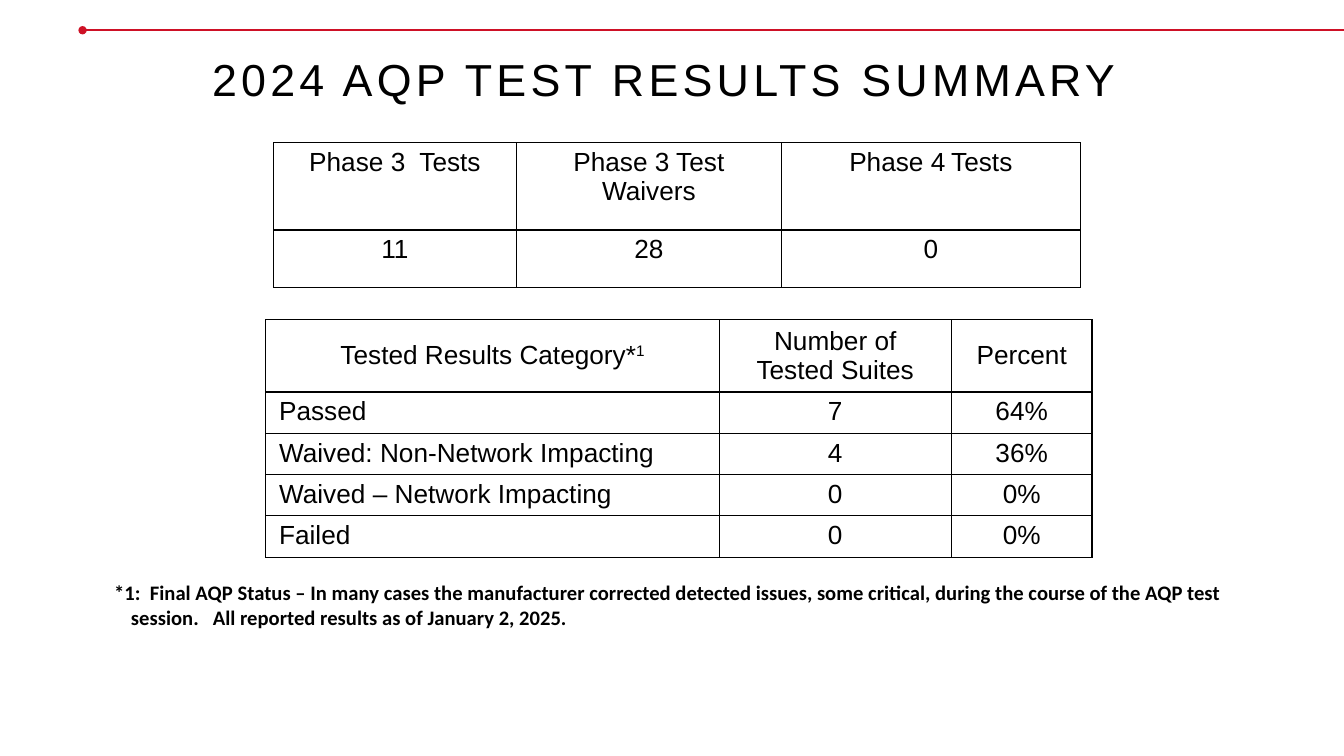
from lxml import etree
from pptx import Presentation
from pptx import util as u
from pptx.dml.color import RGBColor
from pptx.enum import shapes, text
from pptx.oxml import ns

BLACK = RGBColor(0x00, 0x00, 0x00)
RED = RGBColor(0xCE, 0x11, 0x26)
LEFT, CENTER = text.PP_ALIGN.LEFT, text.PP_ALIGN.CENTER
TOP, MIDDLE = text.MSO_ANCHOR.TOP, text.MSO_ANCHOR.MIDDLE


class Slide:
    """Style and drawing methods for one page; lengths are in points."""

    title_font = {"name": "Arial", "size": u.Pt(32), "bold": False}
    cell_font = {"name": "Arial", "size": u.Pt(18.7), "bold": False}
    note_font = {"name": "Calibri", "size": u.Pt(14.7), "bold": True}
    thin, thick = 0.75, 1.5

    def __init__(self, deck):
        self.page = deck.slides.add_slide(deck.slide_layouts[5])

    def style(self, target, values):
        for name, value in values.items():
            setattr(target, name, value)

    def add_words(self, para, words, font, **changes):
        span = para.add_run()
        span.text = words
        self.style(span.font, {**font, **changes})
        span.font.color.rgb = BLACK
        return span

    def frame(self, box, left, top, width, height):
        self.style(box, {"left": u.Pt(left), "top": u.Pt(top),
                         "width": u.Pt(width), "height": u.Pt(height)})
        self.style(box.text_frame, {
            "word_wrap": True, "auto_size": text.MSO_AUTO_SIZE.NONE,
            "vertical_anchor": TOP,
            "margin_left": u.Pt(9.6), "margin_right": u.Pt(9.6),
            "margin_top": u.Pt(4.8), "margin_bottom": u.Pt(4.8)})
        return box.text_frame.paragraphs[0]

    def title(self, words, *place):
        para = self.frame(self.page.shapes.title, *place)
        self.style(para, {"alignment": CENTER, "line_spacing": 0.8,
                          "space_before": u.Pt(0)})
        span = self.add_words(para, words, self.title_font)
        span.font._element.set("spc", "300")

    def note(self, words, *place):
        box = self.page.shapes.add_textbox(0, 0, 0, 0)
        para = self.frame(box, *place)
        properties = para._p.get_or_add_pPr()
        properties.set("marL", str(u.Pt(12)))
        properties.set("indent", str(-u.Pt(12)))
        self.add_words(para, words, self.note_font)

    def rule(self, left, top, right):
        line = self.page.shapes.add_connector(
            shapes.MSO_CONNECTOR.STRAIGHT,
            u.Pt(left), u.Pt(top), u.Pt(right), u.Pt(top))
        line.line.color.rgb = RED
        line.line.width = u.Pt(1.5)
        etree.SubElement(line.line._get_or_add_ln(), ns.qn("a:headEnd"), type="oval")
        etree.SubElement(line._element.spPr, ns.qn("a:effectLst"))

    def borders(self, cell, widths):
        properties = cell._tc.get_or_add_tcPr()
        for side, width in widths.items():
            edge = etree.SubElement(properties, ns.qn("a:ln" + side), w=str(u.Pt(width)))
            fill = etree.SubElement(edge, ns.qn("a:solidFill"))
            etree.SubElement(fill, ns.qn("a:srgbClr"), val=str(BLACK))

    def table(self, left, top, columns, heights, rows, header_anchor=TOP,
              first_column=CENTER, right_edge=thin):
        table = self.page.shapes.add_table(
            len(heights), len(columns), u.Pt(left), u.Pt(top),
            u.Pt(sum(columns)), u.Pt(sum(heights))).table
        self.style(table, {"first_row": False, "horz_banding": False})
        for column, width in zip(table.columns, columns):
            column.width = u.Pt(width)
        for r, (height, values) in enumerate(zip(heights, rows)):
            table.rows[r].height = u.Pt(height)
            for c, value in enumerate(values):
                cell = table.cell(r, c)
                last = c == len(columns) - 1
                self.borders(cell, {
                    "L": self.thin, "R": right_edge if last else self.thin,
                    "T": self.thick if r == 1 else self.thin,
                    "B": self.thick if r == 0 else self.thin})
                cell.fill.background()
                self.style(cell, {
                    "margin_left": u.Pt(9.6), "margin_right": u.Pt(9.6),
                    "margin_top": u.Pt(3.6), "margin_bottom": u.Pt(3.6),
                    "vertical_anchor": TOP if r else header_anchor})
                para = cell.text_frame.paragraphs[0]
                para.alignment = first_column if r and c == 0 else CENTER
                spans = [(value, {})] if isinstance(value, str) else value
                for words, changes in spans:
                    span = self.add_words(para, words, self.cell_font, **changes)
                    if words == "1" and len(spans) > 1:
                        span.font._element.set("baseline", "30000")


def main():
    deck = Presentation()
    deck.slide_width, deck.slide_height = u.Pt(960), u.Pt(540)
    slide = Slide(deck)

    # Heading
    slide.rule(59, 21.6, 960)
    slide.title("2024 AQP TEST RESULTS SUMMARY ", 0, 39.6, 960, 60.5)

    # Results by category
    slide.table(
        189.8, 228.2, [324, 165.6, 100.8], [51.84] + [29.52] * 4,
        [([("Tested Results Category*", {}), ("1", {})],
          "Number of Tested Suites", "Percent"),
         ("Passed", "7", "64%"),
         ("Waived: Non-Network Impacting", "4", "36%"),
         ("Waived – Network Impacting", "0", "0%"),
         ("Failed", "0", "0%")],
        header_anchor=MIDDLE, first_column=LEFT, right_edge=slide.thick)

    # Tests by phase
    phase_4 = [("Phase 4", {}), (" ", {"size": u.Pt(15)}), ("Tests", {})]
    slide.table(
        195.5, 102, [173.2, 189.6, 213.2], [62.4, 41],
        [("Phase 3  Tests", "Phase 3 Test Waivers", phase_4),
         ("11", "28", "0")])

    # Footnote
    slide.note(
        "*1:  Final AQP Status – In many cases the manufacturer corrected "
        "detected issues, some critical, during the course of the AQP test "
        "session.   All reported results as of January 2, 2025.",
        72, 409.7, 823, 47.5)

    deck.save("out.pptx")


if __name__ == "__main__":
    main()
